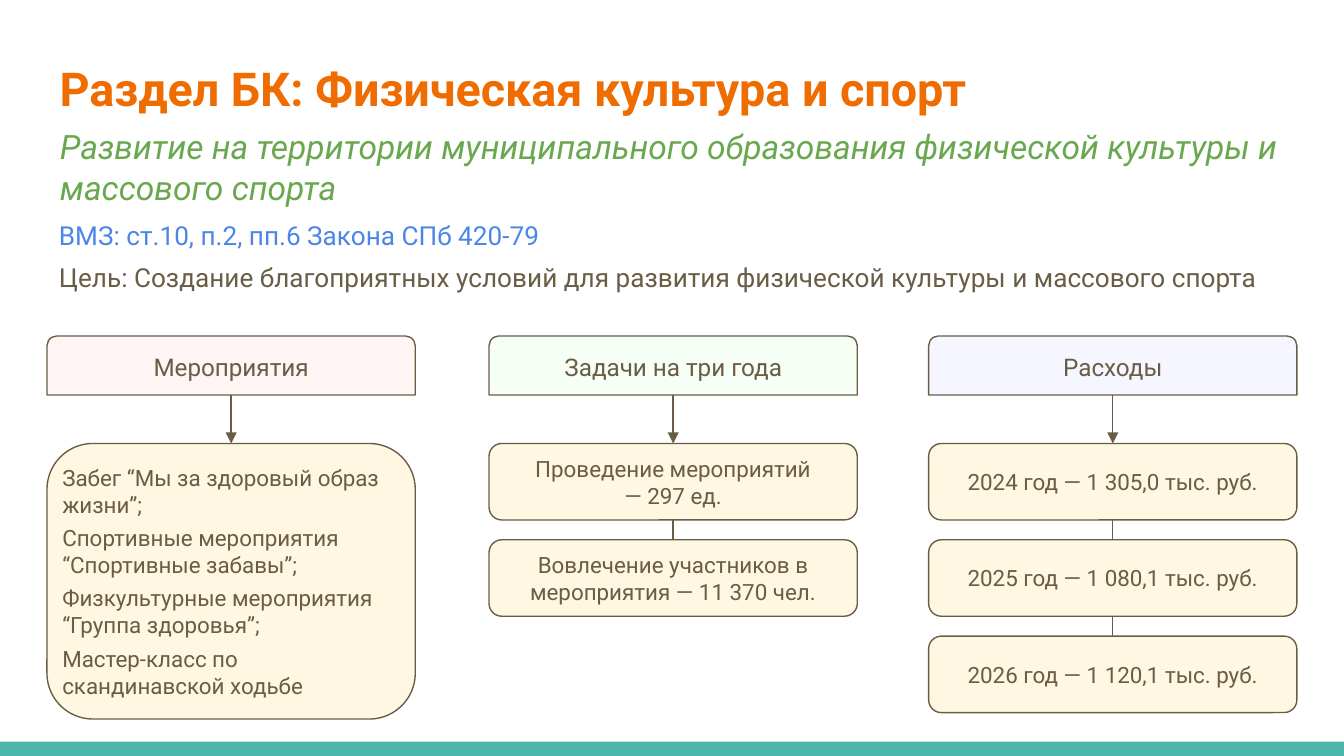
from lxml import etree
from pptx import Presentation
from pptx.dml.color import RGBColor
from pptx.enum.shapes import MSO_CONNECTOR, MSO_SHAPE
from pptx.enum.text import MSO_ANCHOR, PP_ALIGN
from pptx.oxml.ns import qn
from pptx.util import Pt

LINE = MSO_CONNECTOR.STRAIGHT
RECT, ROUND = MSO_SHAPE.RECTANGLE, MSO_SHAPE.ROUNDED_RECTANGLE
TAB = MSO_SHAPE.ROUND_2_SAME_RECTANGLE
LEFT, CENTER = PP_ALIGN.LEFT, PP_ALIGN.CENTER
TOP, MIDDLE = MSO_ANCHOR.TOP, MSO_ANCHOR.MIDDLE

COLORS = {
    "bar": "4DB6AC", "title": "EF6C00", "topic": "6AA84F", "law": "4A86E8",
    "text": "695D46", "box": "FFF7E1",
    "pink": "FFF5F5", "green": "F6FFF5", "blue": "F5F6FF",
}
FONT = "Roboto"
PAD = 7.2
WIDTH = 197.3
HEAD_TOP, HEAD_HIGH = 180, 31.6
BOX_TOP, BOX_HIGH, STEP = 237.6, 41, 51.6
LIST_HIGH = 147.6

COLUMNS = [
    (25.2, "pink", "Мероприятия", [[
        "Забег “Мы за здоровый образ жизни”;",
        "Спортивные мероприятия “Спортивные забавы”;",
        "Физкультурные мероприятия “Группа здоровья”;",
        "Мастер-класс по скандинавской ходьбе",
    ]]),
    (262, "green", "Задачи на три года", [
        ["Проведение мероприятий", "— 297 ед."],
        ["Вовлечение участников в мероприятия — 11 370 чел."],
    ]),
    (497.5, "blue", "Расходы", [
        ["2024 год — 1 305,0 тыс. руб."],
        ["2025 год — 1 080,1 тыс. руб."],
        ["2026 год — 1 120,1 тыс. руб."],
    ]),
]


def rgb(name):
    return RGBColor.from_string(COLORS[name])


def write(shape, lines, size, color="text", align=LEFT, anchor=MIDDLE,
          pad=PAD, gap=0, **style):
    """Fill the shape with one paragraph per line; style holds font values."""
    frame = shape.text_frame
    frame.word_wrap = True
    frame.vertical_anchor = anchor
    frame.margin_left = frame.margin_right = Pt(pad)
    frame.margin_top = frame.margin_bottom = Pt(pad)
    values = {"name": FONT, "size": Pt(size), **style}
    for i, line in enumerate(lines):
        para = frame.paragraphs[0] if i == 0 else frame.add_paragraph()
        para.alignment = align
        para.space_before = Pt(gap if i else 0)
        run = para.add_run()
        run.text = line
        run.font.color.rgb = rgb(color)
        for key, value in values.items():
            setattr(run.font, key, value)


def add_text(slide, place, line, size, color, **style):
    box = slide.shapes.add_textbox(*map(Pt, place))
    write(box, [line], size, color, **style)


def add_box(slide, kind, place, fill, edge=True):
    box = slide.shapes.add_shape(kind, *map(Pt, place))
    box.shadow.inherit = False
    box.fill.solid()
    box.fill.fore_color.rgb = rgb(fill)
    if edge:
        box.line.color.rgb = rgb("text")
        box.line.width = Pt(0.75)
    else:
        box.line.fill.background()
    return box


def add_link(slide, above, below, arrow=False):
    """Join the bottom of one box to the top of the next."""
    mid = above.left + above.width // 2
    link = slide.shapes.add_connector(
        LINE, mid, above.top + above.height, mid, below.top)
    if not arrow:
        link.begin_connect(above, 2)
    link.end_connect(below, 0)
    link.line.color.rgb = rgb("text")
    link.line.width = Pt(0.75)
    if arrow:
        etree.SubElement(link.line._get_or_add_ln(), qn("a:tailEnd"),
                         type="triangle")
    etree.SubElement(link._element.spPr, qn("a:effectLst"))


def add_column(slide, left, fill, name, items):
    head = add_box(slide, TAB, (left, HEAD_TOP, WIDTH, HEAD_HIGH), fill)
    write(head, [name], 13, align=CENTER, pad=2)
    many = len(items) > 1
    last = head
    for i, lines in enumerate(items):
        high = BOX_HIGH if many else LIST_HIGH
        box = add_box(slide, ROUND, (left, BOX_TOP + i * STEP, WIDTH, high),
                      "box")
        if many:
            write(box, lines, 12, align=CENTER, pad=2)
        else:
            write(box, lines, 12, pad=1, gap=3.5)
        add_link(slide, last, box, arrow=last is head)
        last = box


def add_title(slide, place, line):
    title = slide.shapes.title
    title.left, title.top, title.width, title.height = map(Pt, place)
    write(title, [line], 25, "title", bold=True)


def main():
    deck = Presentation()
    deck.slide_width, deck.slide_height = Pt(720), Pt(405)
    slide = deck.slides.add_slide(deck.slide_layouts[5])
    add_box(slide, RECT, (0, 397.4, 720, 7.6), "bar", edge=False)
    add_title(slide, (24.7, 23, 671, 48.2),
              "Раздел БК: Физическая культура и спорт")
    add_text(slide, (25, 60.5, 671, 55.4),
             "Развитие на территории муниципального образования "
             "физической культуры и массового спорта",
             18, "topic", anchor=TOP, italic=True)
    add_text(slide, (24.5, 110.2, 684, 31.7),
             "ВМЗ: ст.10, п.2, пп.6 Закона СПб 420-79", 14, "law")
    add_text(slide, (24.5, 132.5, 676, 31.7),
             "Цель: Создание благоприятных условий для развития "
             "физической культуры и массового спорта", 14, "text")
    for column in COLUMNS:
        add_column(slide, *column)
    deck.save("out.pptx")


if __name__ == "__main__":
    main()
